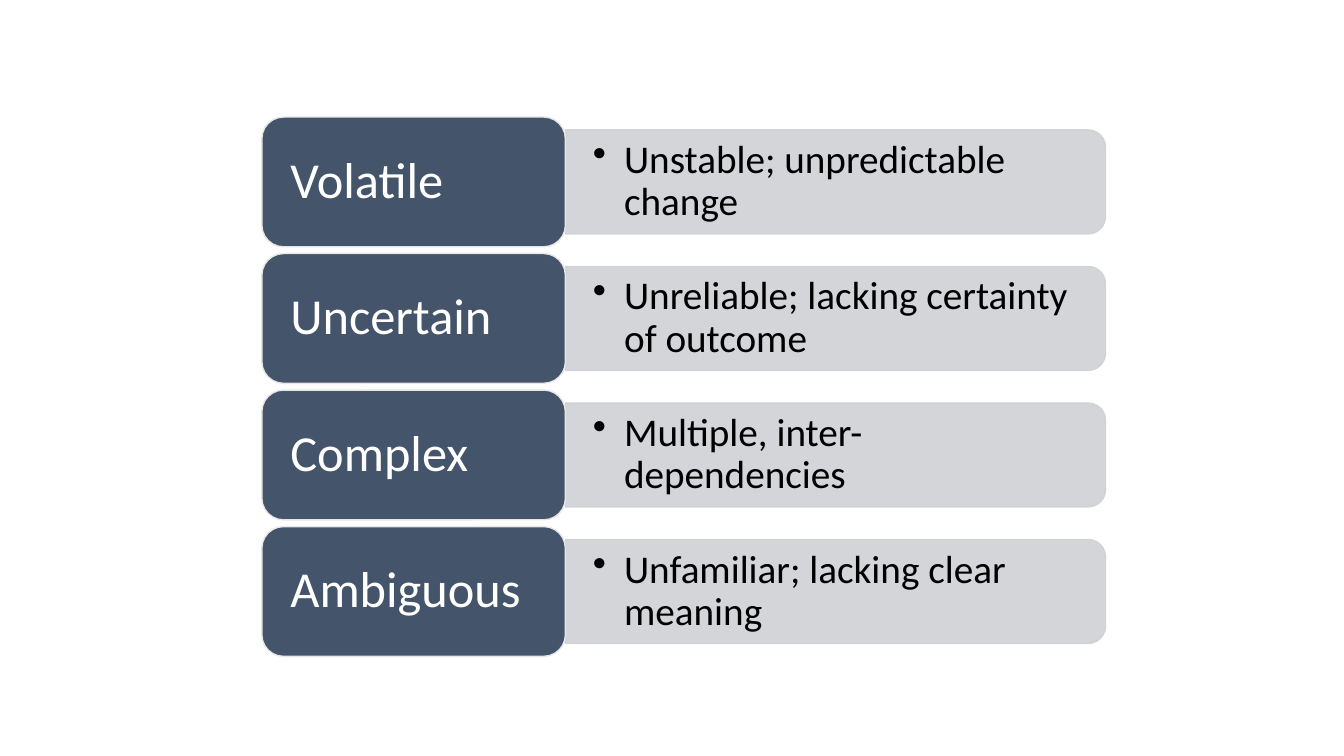
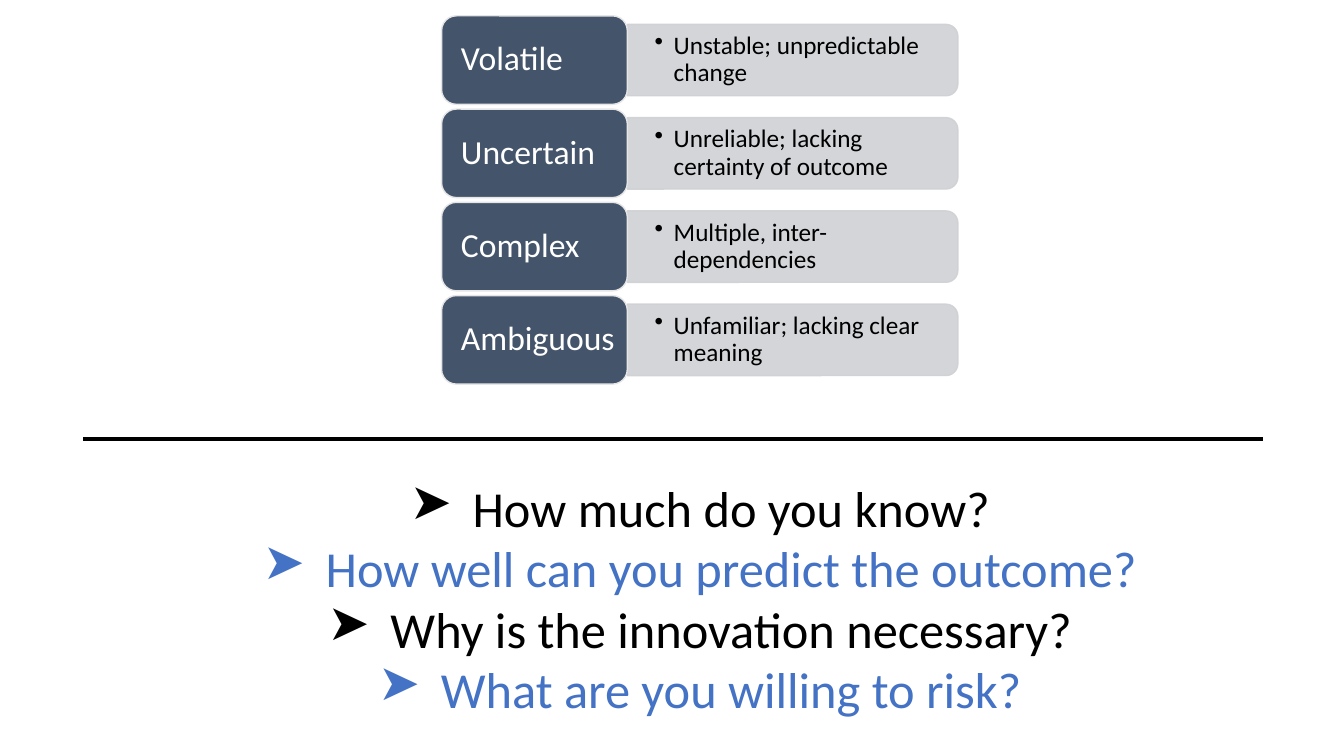
from dataclasses import dataclass

from lxml import etree
from pptx import Presentation
from pptx.dml.color import RGBColor
from pptx.enum.shapes import MSO_CONNECTOR, MSO_SHAPE
from pptx.enum.text import MSO_ANCHOR, MSO_AUTO_SIZE, PP_ALIGN
from pptx.oxml.ns import qn
from pptx.util import Cm, Pt


@dataclass(frozen=True)
class Theme:
    font: str = "Calibri"
    tile: str = "44546A"
    tile_edge: str = "E7E6E6"
    tile_text: str = "FFFFFF"
    bar: str = "CFD1D4"
    bar_opacity: int = 90
    text: str = "000000"
    accent: str = "4472C4"
    question_size: int = 36


THEME = Theme()

TERMS = [
    ("Volatile", "Unstable; unpredictable change"),
    ("Uncertain", "Unreliable; lacking certainty of outcome"),
    ("Complex", "Multiple, inter-dependencies"),
    ("Ambiguous", "Unfamiliar; lacking clear meaning"),
]

QUESTIONS = [
    "How much do you know?",
    "How well can you predict the outcome?",
    "Why is the innovation necessary?",
    "What are you willing to risk?",
]

# Lengths in centimetres, type sizes in points
LARGE_LIST = dict(left=6.6, top=2.95, pitch=3.44, tile=(7.65, 3.27), bar=(13.61, 2.62),
                  inset=0.56, indent=0.79, term_size=36, meaning_size=28)
SMALL_LIST = dict(left=11.13, top=0.4, pitch=2.35, tile=(4.68, 2.23), bar=(8.33, 1.8),
                  inset=0.38, indent=0.48, term_size=24, meaning_size=18)


def set_frame(shape, **margins):
    frame = shape.text_frame
    settings = dict(word_wrap=True, auto_size=MSO_AUTO_SIZE.NONE,
                    vertical_anchor=MSO_ANCHOR.MIDDLE)
    settings.update({f"margin_{side}": Cm(size) for side, size in margins.items()})
    for name, value in settings.items():
        setattr(frame, name, value)
    return frame


def write(para, text, size, color, align=PP_ALIGN.LEFT, spacing=None):
    para.alignment = align
    para.line_spacing = spacing
    span = para.add_run()
    span.text = text
    for name, value in dict(name=THEME.font, size=Pt(size)).items():
        setattr(span.font, name, value)
    span.font.color.rgb = RGBColor.from_string(color)


def add_bullet(para, symbol, indent):
    properties = para._p.get_or_add_pPr()
    properties.set("marL", str(Cm(indent)))
    properties.set("indent", str(-Cm(indent)))
    etree.SubElement(properties, qn("a:buChar")).set("char", symbol)


def paint(shape, fill, edge):
    shape.shadow.inherit = False
    shape.fill.solid()
    shape.fill.fore_color.rgb = RGBColor.from_string(fill)
    shape.line.color.rgb = RGBColor.from_string(edge)
    shape.line.width = Pt(1)


def set_opacity(shape, percent):
    for color in shape._element.spPr.iter(qn("a:srgbClr")):
        etree.SubElement(color, qn("a:alpha")).set("val", str(percent * 1000))


def add_bar(page, left, middle, width, height):
    """Draw a bar rounded at its right end: an upright shape turned by 90 degrees."""
    bar = page.shapes.add_shape(
        MSO_SHAPE.ROUND_2_SAME_RECTANGLE,
        Cm(left + (width - height) / 2), Cm(middle - width / 2), Cm(height), Cm(width))
    bar.rotation = 90
    paint(bar, THEME.bar, THEME.bar)
    set_opacity(bar, THEME.bar_opacity)


def add_meaning(page, text, left, middle, layout):
    width, height = layout["bar"][0] - 0.1, layout["bar"][1] * 0.9
    box = page.shapes.add_textbox(Cm(left), Cm(middle - height / 2), Cm(width), Cm(height))
    frame = set_frame(box, left=0.69, right=0.69, top=0.36, bottom=0.36)
    para = frame.paragraphs[0]
    write(para, text, layout["meaning_size"], THEME.text, spacing=0.9)
    add_bullet(para, "•", layout["indent"])


def add_term(page, text, top, layout):
    width, height = layout["tile"]
    tile = page.shapes.add_shape(MSO_SHAPE.ROUNDED_RECTANGLE, Cm(layout["left"]), Cm(top),
                                 Cm(width), Cm(height))
    paint(tile, THEME.tile, THEME.tile_edge)
    frame = set_frame(tile, left=layout["inset"], right=0)
    write(frame.paragraphs[0], text, layout["term_size"], THEME.tile_text, spacing=0.9)


def add_term_list(page, layout):
    tile_width, tile_height = layout["tile"]
    bar_left = layout["left"] + tile_width
    for row, (term, meaning) in enumerate(TERMS):
        top = layout["top"] + row * layout["pitch"]
        middle = top + tile_height / 2
        add_bar(page, bar_left, middle, *layout["bar"])
        add_meaning(page, meaning, bar_left, middle, layout)
        add_term(page, term, top, layout)


def add_questions(page):
    box = page.shapes.add_textbox(Cm(6.27), Cm(11.89), Cm(22.73), Cm(6.4))
    frame = set_frame(box)
    frame.vertical_anchor = MSO_ANCHOR.TOP
    for number, question in enumerate(QUESTIONS):
        para = frame.add_paragraph() if number else frame.paragraphs[0]
        color = THEME.accent if number % 2 else THEME.text
        write(para, question, THEME.question_size, color, PP_ALIGN.CENTER)
        add_bullet(para, "➤", 1.59)


def add_divider(page):
    divider = page.shapes.add_connector(MSO_CONNECTOR.STRAIGHT, Cm(2.1), Cm(11.07),
                                        Cm(31.82), Cm(11.07))
    divider.line.color.rgb = RGBColor.from_string(THEME.text)
    divider.line.width = Pt(3)
    etree.SubElement(divider._element.spPr, qn("a:effectLst"))


def main():
    deck = Presentation()
    deck.slide_width, deck.slide_height = Cm(33.87), Cm(19.05)
    blank = deck.slide_layouts[6]

    overview = deck.slides.add_slide(blank)
    add_term_list(overview, LARGE_LIST)

    reflection = deck.slides.add_slide(blank)
    add_term_list(reflection, SMALL_LIST)
    add_questions(reflection)
    add_divider(reflection)

    deck.save("out.pptx")


if __name__ == "__main__":
    main()
